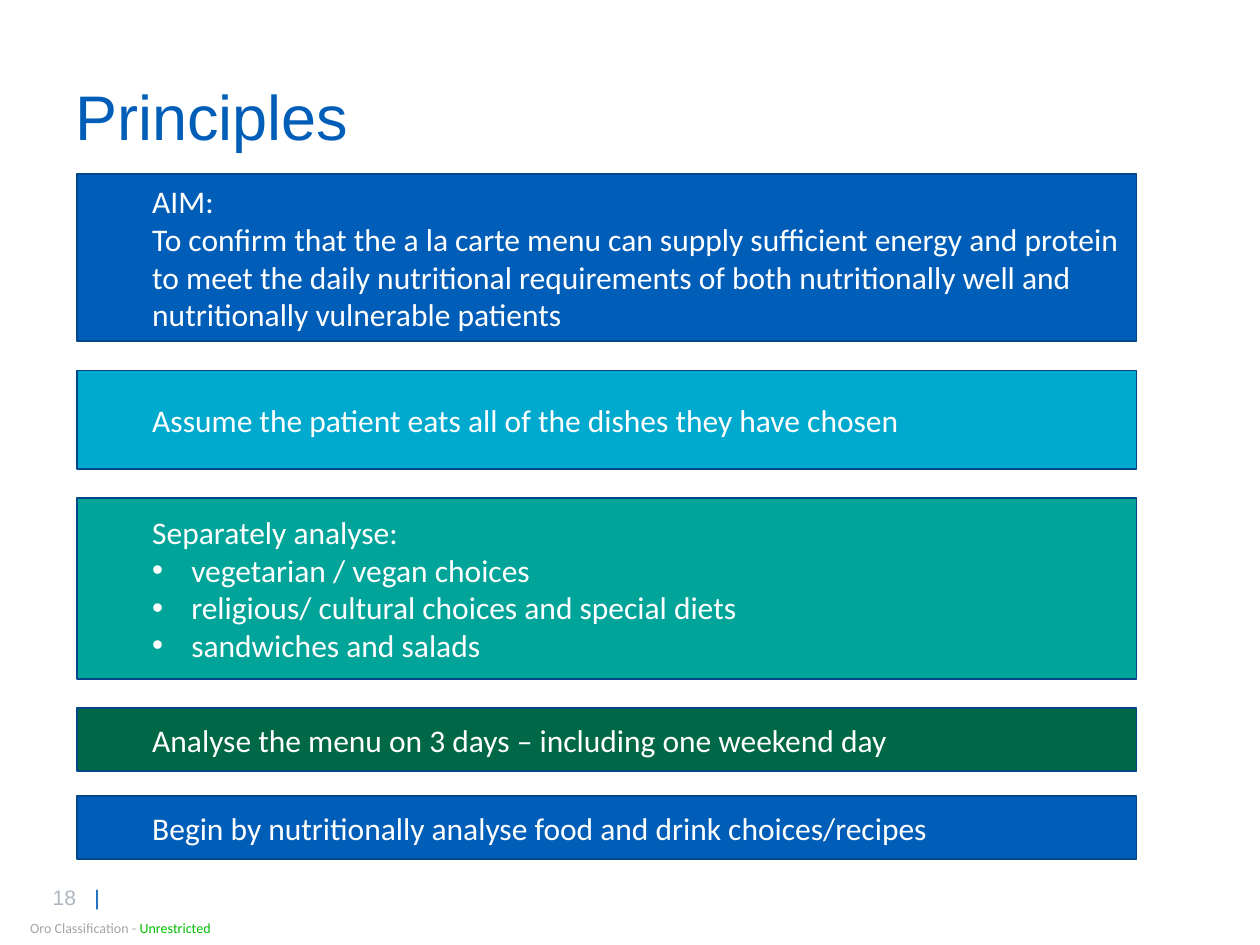
from lxml import etree
from pptx import Presentation
from pptx.dml.color import RGBColor
from pptx.enum.shapes import MSO_SHAPE
from pptx.enum.text import MSO_ANCHOR, PP_ALIGN
from pptx.oxml.ns import qn
from pptx.util import Inches, Pt

RECT = MSO_SHAPE.RECTANGLE
TOP, MIDDLE, BOTTOM = MSO_ANCHOR.TOP, MSO_ANCHOR.MIDDLE, MSO_ANCHOR.BOTTOM
LEFT = PP_ALIGN.LEFT
BLUE, CYAN, TEAL, GREEN, NAVY = "005EB8", "00A9CE", "00A499", "006747", "004688"
WHITE, SLATE, GREY, LIME = "FFFFFF", "ADB6BE", "A5A5A5", "00C000"

TITLE = "Principles"
# fill, height, gap below, lines, bulleted lines
PRINCIPLES = [
    (BLUE, 1.33, 0.23, [
        "AIM:",
        "To confirm that the a la carte menu can supply sufficient energy and protein "
        "to meet the daily nutritional requirements of both nutritionally well and "
        "nutritionally vulnerable patients"], []),
    (CYAN, 0.78, 0.23, ["Assume the patient eats all of the dishes they have chosen"], []),
    (TEAL, 1.44, 0.23, ["Separately analyse:"], [
        "vegetarian / vegan choices",
        "religious/ cultural choices and special diets",
        "sandwiches and salads"]),
    (GREEN, 0.5, 0.2, ["Analyse the menu on 3 days – including one weekend day"], []),
    (BLUE, 0.5, 0, ["Begin by nutritionally analyse food and drink choices/recipes"], []),
]
PAGE_MARK = [("18", SLATE), ("\t|", BLUE)]
CLASSIFICATION = [("Oro Classification - ", GREY), ("Unrestricted", LIME)]

BAND_LEFT, BAND_TOP, BAND_WIDTH = 0.61, 1.38, 8.41
INDENT, BULLET_HANG = 0.5, 0.31


def color(hex_string):
    return RGBColor.from_string(hex_string)


def add_run(paragraph, text, size, font, hex_string):
    run = paragraph.add_run()
    run.text = text
    run.font.size = Pt(size)
    run.font.name = font
    run.font.color.rgb = color(hex_string)


def add_label(slide, box, runs, size, font, anchor=TOP):
    """Add a one-line text box and return its paragraph."""
    frame = slide.shapes.add_textbox(*map(Inches, box)).text_frame
    frame.word_wrap = True
    frame.vertical_anchor = anchor
    paragraph = frame.paragraphs[0]
    for text, hex_string in runs:
        add_run(paragraph, text, size, font, hex_string)
    return paragraph


def set_tab(paragraph, position):
    tabs = etree.SubElement(paragraph._p.get_or_add_pPr(), qn("a:tabLst"))
    etree.SubElement(tabs, qn("a:tab"), pos=str(Inches(position)), algn="l")


def set_indent(paragraph, bulleted):
    properties = paragraph._p.get_or_add_pPr()
    hang = BULLET_HANG if bulleted else 0
    properties.set("marL", str(Inches(INDENT + hang)))
    properties.set("indent", str(Inches(-hang)))
    if bulleted:
        etree.SubElement(properties, qn("a:buFont"), typeface="Arial")
        etree.SubElement(properties, qn("a:buChar"), char="•")


def add_band(slide, top, height, fill, lines, bullets):
    band = slide.shapes.add_shape(
        RECT, *map(Inches, (BAND_LEFT, top, BAND_WIDTH, height)))
    band.shadow.inherit = False
    band.fill.solid()
    band.fill.fore_color.rgb = color(fill)
    band.line.color.rgb = color(NAVY)
    band.line.width = Pt(1)
    frame = band.text_frame
    frame.word_wrap = True
    frame.vertical_anchor = MIDDLE
    for index, text in enumerate(lines + bullets):
        paragraph = frame.add_paragraph() if index else frame.paragraphs[0]
        paragraph.alignment = LEFT
        set_indent(paragraph, index >= len(lines))
        add_run(paragraph, text, 18, "Calibri", WHITE)


def main():
    deck = Presentation()
    deck.slide_width, deck.slide_height = Inches(10), Inches(7.5)
    slide = deck.slides.add_slide(deck.slide_layouts[6])

    page_mark = add_label(slide, (0.32, 6.97, 0.71, 0.3), PAGE_MARK, 12, "Arial")
    set_tab(page_mark, 0.33)
    title = add_label(slide, (0.5, 0.6, 7.18, 0.67), [(TITLE, BLUE)], 36, "Arial", BOTTOM)
    title.line_spacing = 0.9

    top = BAND_TOP
    for fill, height, gap, lines, bullets in PRINCIPLES:
        add_band(slide, top, height, fill, lines, bullets)
        top += height + gap

    add_label(slide, (0.14, 7.25, 9.72, 0.24), CLASSIFICATION, 8, "Calibri")
    deck.save("out.pptx")


if __name__ == "__main__":
    main()
